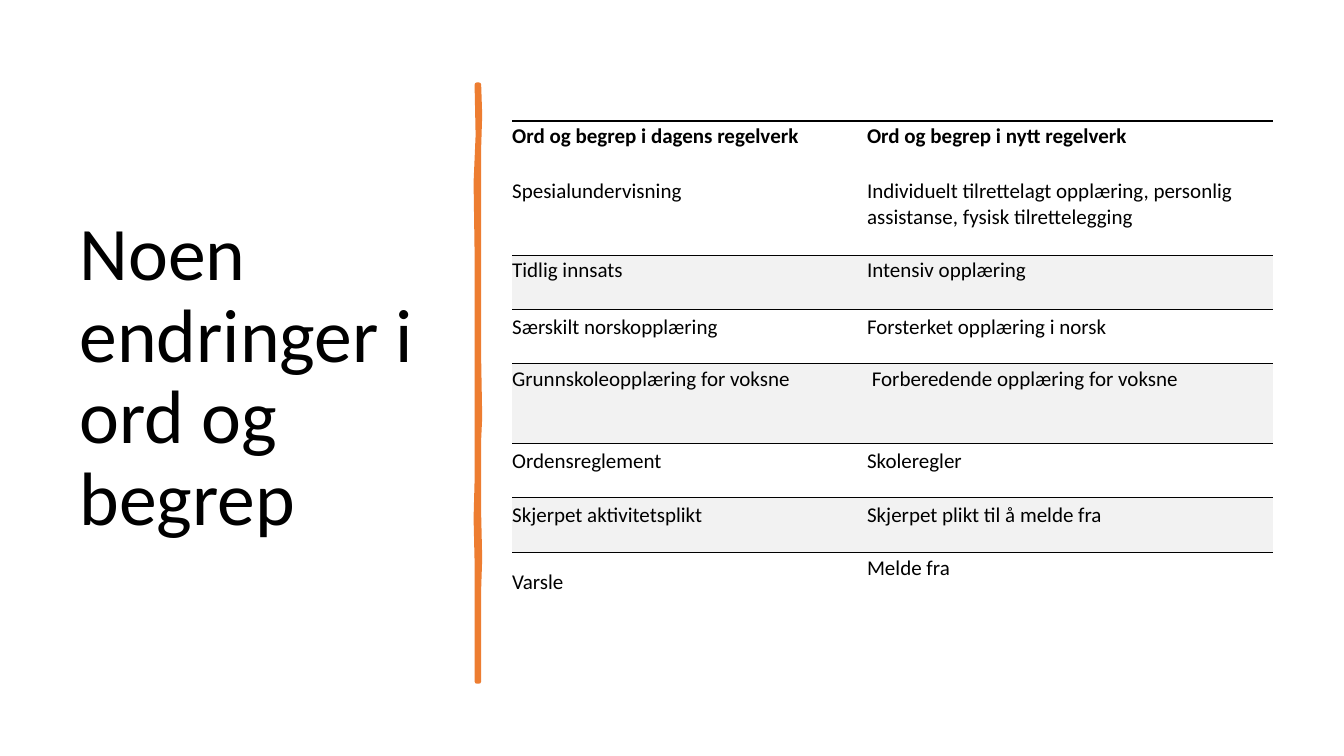
from lxml.etree import SubElement
from pptx import Presentation
from pptx.dml.color import RGBColor
from pptx.enum.text import MSO_ANCHOR as Anchor
from pptx.oxml import parse_xml
from pptx.oxml.ns import nsdecls, qn
from pptx.util import Inches, Pt

FONT = "Calibri"
BLACK, ORANGE, BAND = "000000", "ED7D31", "F2F2F2"
NO_STYLE = "{2D5ABB26-0587-4C30-8999-92F81FD0307C}"
COLUMN_SHARES = [3.52, 4.03]
TERMS = [
    ("Ord og begrep i dagens regelverk", "Ord og begrep i nytt regelverk"),
    ("Spesialundervisning",
     "Individuelt tilrettelagt opplæring, personlig assistanse, fysisk tilrettelegging"),
    ("Tidlig innsats", "Intensiv opplæring"),
    ("Særskilt norskopplæring", "Forsterket opplæring i norsk"),
    ("Grunnskoleopplæring for voksne", " Forberedende opplæring for voksne"),
    ("Ordensreglement", "Skoleregler"),
    ("Skjerpet aktivitetsplikt", "Skjerpet plikt til å melde fra"),
    ("Varsle", "Melde fra"),
]
TALL_ROWS = {1, 4, 7}
MIDDLE_CELLS = {(3, 0), (3, 1), (5, 0), (5, 1), (6, 0), (6, 1), (7, 0)}
RIGHT_EDGE = [(0, 0.02), (0.3, 0.03), (0.62, 0.02), (1.42, 0.02), (2.1, 0.02),
              (2.72, 0.02), (3.3, 0.03), (3.52, 0.02), (4.26, 0.02),
              (4.7, 0.03), (5, 0.02), (5.92, 0.02)]
LEFT_EDGE = [(5.92, 0), (5.29, 0), (4.73, 0), (4.3, -0.01), (3.93, 0), (3.31, 0),
             (2.51, 0), (1.66, 0), (0.97, -0.01), (0.5, 0.01), (0, 0)]


def color(value):
    """Turn a hex string into a colour."""
    return RGBColor.from_string(value)


def write_text(frame, text, size, bold=False, spacing=None, anchor=Anchor.TOP):
    """Put one formatted paragraph in a text frame."""
    frame.word_wrap = True
    frame.vertical_anchor = anchor
    paragraph = frame.paragraphs[0]
    paragraph.line_spacing = spacing
    run = paragraph.add_run()
    run.text = text
    run.font.name, run.font.size, run.font.bold = FONT, Pt(size), bold
    run.font.color.rgb = color(BLACK)


def add_title(slide, left, top, width, height):
    """Place the slide title in its box."""
    box = slide.shapes.add_textbox(*map(Inches, (left, top, width, height)))
    write_text(box.text_frame, "Noen endringer i ord og begrep", 54,
               spacing=0.9, anchor=Anchor.MIDDLE)


def add_divider(slide, left, top):
    """Draw the hand-sketched vertical line down from a point."""
    points = [(Inches(left + x), Inches(top + y)) for y, x in RIGHT_EDGE + LEFT_EDGE]
    builder = slide.shapes.build_freeform(*points[0])
    builder.add_line_segments(points[1:], close=True)
    shape = builder.convert_to_shape()
    shape.shadow.inherit = False
    shape.fill.solid()
    shape.fill.fore_color.rgb = color(ORANGE)
    shape.line.color.rgb = color(ORANGE)
    shape.line.width = Pt(3.25)
    SubElement(shape.line._get_or_add_ln(), qn("a:round"))


def add_top_border(cell, width):
    """Draw a black line along the top of a cell."""
    border = parse_xml(
        f'<a:lnT {nsdecls("a")} w="{Pt(width)}"><a:solidFill>'
        f'<a:srgbClr val="{BLACK}"/></a:solidFill></a:lnT>')
    cell._tc.get_or_add_tcPr().insert(0, border)


def fill_cell(cell, text, row, column):
    """Write and format one cell of the term table."""
    cell.margin_left, cell.margin_top = Inches(0), Inches(0.03)
    cell.margin_right, cell.margin_bottom = Inches(0.07), Inches(0.22)
    write_text(cell.text_frame, text, 15, bold=row == 0)
    middle = (row, column) in MIDDLE_CELLS
    cell.vertical_anchor = Anchor.MIDDLE if middle else Anchor.TOP
    banded = row > 0 and row % 2 == 0
    if banded:
        cell.fill.solid()
        cell.fill.fore_color.rgb = color(BAND)
    else:
        cell.fill.background()
    if row == 0 or banded:
        add_top_border(cell, 0.5 if banded else 2.25)


def add_term_table(slide, left, top, width, height):
    """Place the table of old and new terms in its box."""
    frame = slide.shapes.add_table(len(TERMS), 2, *map(Inches, (left, top, width, height)))
    table = frame.table
    table.first_row = table.horz_banding = False
    table._tbl.tblPr.find(qn("a:tableStyleId")).text = NO_STYLE
    for column, share in zip(table.columns, COLUMN_SHARES):
        column.width = Inches(width * share / sum(COLUMN_SHARES))
    for row, terms in enumerate(TERMS):
        table.rows[row].height = Inches(0.79 if row in TALL_ROWS else 0.54)
        for column, text in enumerate(terms):
            fill_cell(table.cell(row, column), text, row, column)


def main():
    """Build and save the presentation."""
    presentation = Presentation()
    presentation.slide_width, presentation.slide_height = Inches(13.33), Inches(7.5)
    slide = presentation.slides.add_slide(presentation.slide_layouts[6])
    add_title(slide, 0.69, 0.7, 3.74, 6.11)
    add_divider(slide, 4.73, 0.84)
    add_term_table(slide, 5.08, 1.2, 7.55, 5.05)
    presentation.save("out.pptx")


if __name__ == "__main__":
    main()
